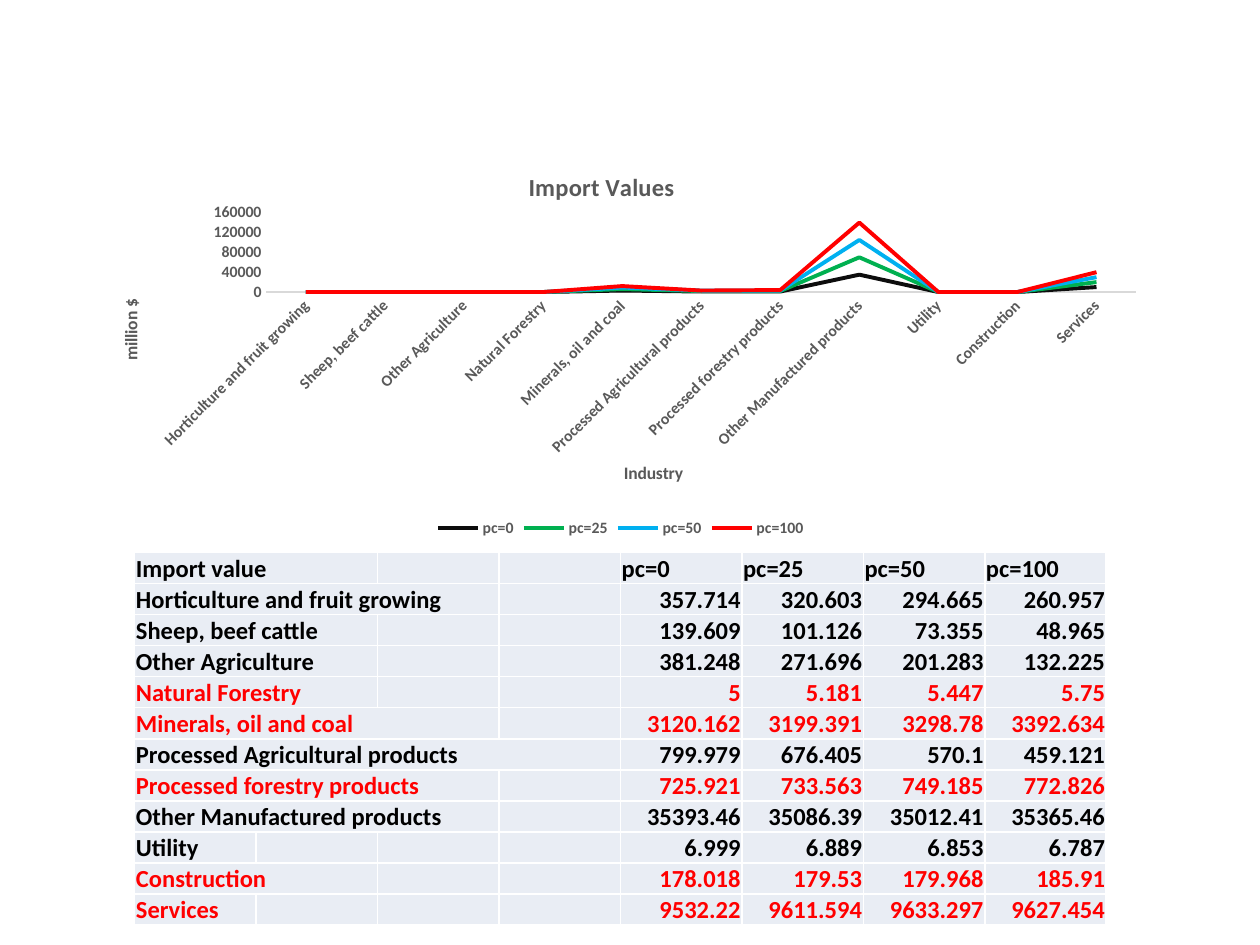
from lxml import etree
from pptx import Presentation
from pptx.chart.data import CategoryChartData
from pptx.dml.color import RGBColor
from pptx.enum.chart import XL_CHART_TYPE, XL_LEGEND_POSITION, XL_MARKER_STYLE, XL_TICK_MARK
from pptx.enum.text import MSO_ANCHOR, PP_ALIGN
from pptx.oxml.ns import qn
from pptx.util import Pt

LINE_STACKED = XL_CHART_TYPE.LINE_STACKED
LEGEND_BOTTOM = XL_LEGEND_POSITION.BOTTOM
NO_MARKER = XL_MARKER_STYLE.NONE
NO_TICK = XL_TICK_MARK.NONE
BOTTOM = MSO_ANCHOR.BOTTOM
LEFT, RIGHT = PP_ALIGN.LEFT, PP_ALIGN.RIGHT

COLORS = {"text": "000000", "rise": "FF0000", "chart": "595959", "axis": "D9D9D9",
          "cell": "E9EDF4", "border": "FFFFFF"}
FONT = "Calibri"

HEADER = ["Import value", "pc=0", "pc=25", "pc=50", "pc=100"]
INDUSTRIES = [
    ("Horticulture and fruit growing", 3, "text", ["357.714", "320.603", "294.665", "260.957"]),
    ("Sheep, beef cattle", 2, "text", ["139.609", "101.126", "73.355", "48.965"]),
    ("Other Agriculture", 2, "text", ["381.248", "271.696", "201.283", "132.225"]),
    ("Natural Forestry", 2, "rise", ["5", "5.181", "5.447", "5.75"]),
    ("Minerals, oil and coal", 3, "rise", ["3120.162", "3199.391", "3298.78", "3392.634"]),
    ("Processed Agricultural products", 4, "text", ["799.979", "676.405", "570.1", "459.121"]),
    ("Processed forestry products", 3, "rise", ["725.921", "733.563", "749.185", "772.826"]),
    ("Other Manufactured products", 3, "text", ["35393.46", "35086.39", "35012.41", "35365.46"]),
    ("Utility", 1, "text", ["6.999", "6.889", "6.853", "6.787"]),
    ("Construction", 2, "rise", ["178.018", "179.53", "179.968", "185.91"]),
    ("Services", 1, "rise", ["9532.22", "9611.594", "9633.297", "9627.454"]),
]
SERIES = [
    ("pc=0", "0D0D0D", [0, 0, 0, 0, 3000, 1000, 1000, 35000, 0, 0, 10000]),
    ("pc=25", "00B050", [0, 0, 0, 0, 3000, 1000, 1000, 35000, 0, 0, 10000]),
    ("pc=50", "00B0F0", [0, 0, 0, 0, 3000, 1000, 1000, 35000, 0, 0, 10000]),
    ("pc=100", "FF0000", [0, 0, 0, 0, 3000, 0, 1000, 35000, 0, 0, 10000]),
]
CHART_BOX = (48, 83, 613.5, 226.8)
TABLE_LEFT, TABLE_TOP, COL_WIDTH, ROW_HEIGHT = 77, 315.7, 69.4, 17.5
LABEL_COLS = 4
CELL_FORMAT = {"margin_left": Pt(0.7), "margin_right": Pt(0.7), "margin_top": Pt(0.7),
               "margin_bottom": Pt(0), "vertical_anchor": BOTTOM}


def rgb(value):
    return RGBColor.from_string(value)


def set_font(font, size, color):
    for name, value in {"name": FONT, "size": Pt(size), "bold": True}.items():
        setattr(font, name, value)
    font.color.rgb = rgb(COLORS[color])


def place(element, index, **position):
    for old in element.findall(qn("c:layout")):
        element.remove(old)
    layout = etree.Element(qn("c:layout"))
    manual = etree.SubElement(layout, qn("c:manualLayout"))
    if "w" in position:
        etree.SubElement(manual, qn("c:layoutTarget"), val="inner")
    for side in ("x", "y"):
        etree.SubElement(manual, qn(f"c:{side}Mode"), val="edge")
    for side, value in position.items():
        etree.SubElement(manual, qn(f"c:{side}"), val=str(value))
    element.insert(index, layout)


def add_title(title, text, size, x, y):
    tf = title.text_frame
    tf.text = text
    set_font(tf.paragraphs[0].runs[0].font, size, "chart")
    place(title._element, 1, x=x, y=y)
    return tf


def add_import_chart(s):
    data = CategoryChartData()
    data.categories = [row[0] for row in INDUSTRIES]
    for name, _, values in SERIES:
        data.add_series(name, values)
    chart = s.shapes.add_chart(LINE_STACKED, *map(Pt, CHART_BOX), data).chart
    chart.font.name, chart.font.size = FONT, Pt(10)
    chart.has_title = True
    add_title(chart.chart_title, "Import Values", 14, 0.41, 0.05)
    chart.has_legend = True
    chart.legend.position = LEGEND_BOTTOM
    chart.legend.include_in_layout = False
    set_font(chart.legend.font, 9, "chart")
    chart.plots[0].vary_by_categories = False
    for series, (_, color, _) in zip(chart.plots[0].series, SERIES):
        series.smooth = False
        series.marker.style = NO_MARKER
        series.format.line.color.rgb = rgb(color)
        series.format.line.width = Pt(2.25)

    industry, million = chart.category_axis, chart.value_axis
    for axis in (industry, million):
        axis.major_tick_mark = axis.minor_tick_mark = NO_TICK
        axis.has_major_gridlines = False
        set_font(axis.tick_labels.font, 9, "chart")
    industry.format.line.color.rgb = rgb(COLORS["axis"])
    industry.format.line.width = Pt(0.75)
    industry._element.find(qn("c:txPr")).find(qn("a:bodyPr")).set("rot", "-2700000")
    million.format.line.fill.background()
    million.minimum_scale, million.maximum_scale, million.major_unit = 0, 160000, 40000
    million.tick_labels.number_format = "General"
    million.tick_labels.number_format_is_linked = False
    add_title(industry.axis_title, "Industry", 10, 0.5, 0.79)
    tf = add_title(million.axis_title, "million $", 10, 0.03, 0.38)
    tf._txBody.find(qn("a:bodyPr")).set("rot", "-5400000")
    place(chart._chartSpace.chart.plotArea, 0, x=0.17, y=0.17, w=0.81, h=0.2)


def format_cell(cell):
    for name, value in CELL_FORMAT.items():
        setattr(cell, name, value)
    tc_pr = cell._tc.get_or_add_tcPr()
    for side in ("lnL", "lnR", "lnT", "lnB"):
        line = etree.SubElement(tc_pr, qn(f"a:{side}"), w=str(Pt(1)))
        fill = etree.SubElement(line, qn("a:solidFill"))
        etree.SubElement(fill, qn("a:srgbClr"), val=COLORS["border"])
    cell.fill.solid()
    cell.fill.fore_color.rgb = rgb(COLORS["cell"])
    etree.SubElement(cell.text_frame.paragraphs[0]._p, qn("a:endParaRPr"), sz="1400")


def write_cell(cell, text, color, align):
    p = cell.text_frame.paragraphs[0]
    p.alignment = align
    r = p.add_run()
    r.text = text
    set_font(r.font, 14, color)


def add_import_table(s):
    rows = [(HEADER[0], 2, "text", HEADER[1:])] + INDUSTRIES
    n_cols = LABEL_COLS + len(SERIES)
    box = (TABLE_LEFT, TABLE_TOP, COL_WIDTH * n_cols, ROW_HEIGHT * len(rows))
    table = s.shapes.add_table(len(rows), n_cols, *map(Pt, box)).table
    table.first_row = table.horz_banding = False
    for column in table.columns:
        column.width = Pt(COL_WIDTH)
    for i, (label, span, color, values) in enumerate(rows):
        table.rows[i].height = Pt(ROW_HEIGHT)
        for j in range(n_cols):
            format_cell(table.cell(i, j))
        if span > 1:
            table.cell(i, 0).merge(table.cell(i, span - 1))
        write_cell(table.cell(i, 0), label, color, LEFT)
        for j, value in enumerate(values, LABEL_COLS):
            write_cell(table.cell(i, j), value, color, RIGHT if i else LEFT)


def main():
    prs = Presentation()
    prs.slide_width, prs.slide_height = Pt(720), Pt(540)
    s = prs.slides.add_slide(prs.slide_layouts[6])
    add_import_chart(s)
    add_import_table(s)
    prs.save("out.pptx")


if __name__ == "__main__":
    main()
